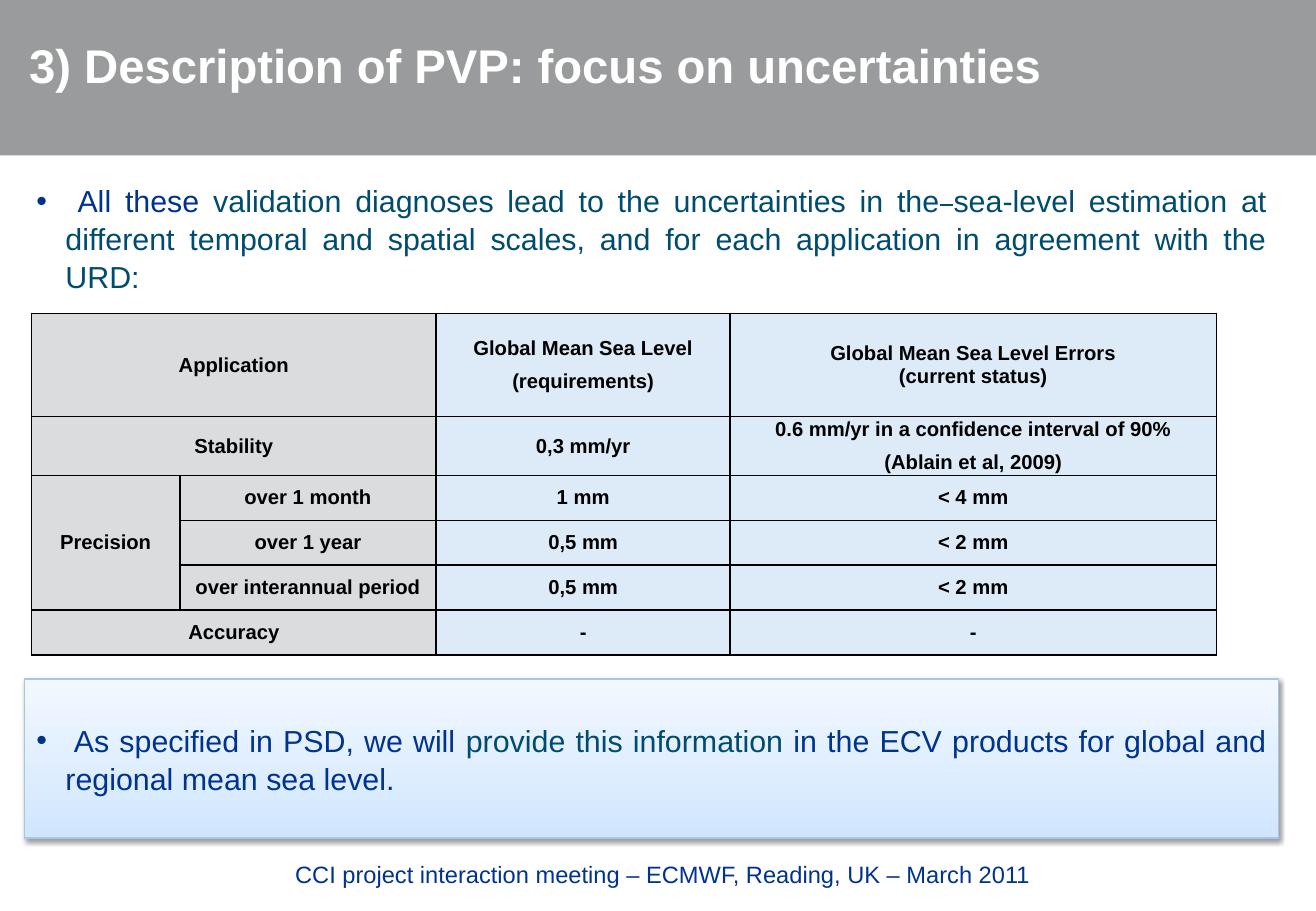
from lxml import etree
from pptx import Presentation
from pptx.dml.color import RGBColor
from pptx.enum.shapes import MSO_SHAPE as Shape
from pptx.enum.text import MSO_ANCHOR as Anchor, PP_ALIGN as Align
from pptx.oxml.ns import qn
from pptx.util import Emu, Pt

PX = 9144  # 100 px to the inch
COLORS = {
    "banner": "9A9B9C", "white": "FFFFFF", "black": "000000",
    "navy": "00338D", "teal": "004C6E",
    "label": "DBDCDD", "value": "DDEAF7",
    "note_low": "D0E6FF", "note_high": "F2F8FF", "note_line": "A5C6E6",
}
COLUMN_WIDTHS = [122, 211, 242, 400]
ROW_HEIGHTS = [85, 48, 37, 37, 37, 37]
LABEL_COLUMNS = 2
REQUIREMENTS = [
    ["Application", "", "Global Mean Sea Level\n(requirements)",
     "Global Mean Sea Level Errors\n(current status)"],
    ["Stability", "", "0,3 mm/yr",
     "0.6 mm/yr in a confidence interval of 90%\n(Ablain et al, 2009)"],
    ["Precision", "over 1 month", "1 mm", "< 4 mm"],
    ["", "over 1 year", "0,5 mm", "< 2 mm"],
    ["", "over interannual period", "0,5 mm", "< 2 mm"],
    ["Accuracy", "", "-", "-"],
]
MERGES = [((0, 0), (0, 1)), ((1, 0), (1, 1)), ((2, 0), (4, 0)), ((5, 0), (5, 1))]
STATUS_HEADER = (0, 3)


def px(*lengths):
    return [Emu(length * PX) for length in lengths]


def rgb(name):
    return RGBColor.from_string(COLORS[name])


def add_text(paragraph, text, size=18, color="navy", bold=False, strike=False):
    run = paragraph.add_run()
    run.text = text
    font = run.font
    font.name, font.size, font.bold = "Arial", Pt(size), bold
    font.color.rgb = rgb(color)
    if strike:
        run._r.get_or_add_rPr().set("strike", "sngStrike")


def add_bullet_text(frame, parts):
    """Fill a frame with one justified bullet made of (text, format) parts."""
    frame.word_wrap = True
    paragraph = frame.paragraphs[0]
    paragraph.alignment = Align.JUSTIFY
    paragraph.line_spacing = 1.04
    properties = paragraph._p.get_or_add_pPr()
    properties.set("marL", str(24 * PX))
    properties.set("indent", str(-24 * PX))
    etree.SubElement(properties, qn("a:buFont"), typeface="Arial")
    etree.SubElement(properties, qn("a:buChar"), char="•")
    for text, style in parts:
        add_text(paragraph, text, **style)


def add_box(slide, left, top, width, height):
    box = slide.shapes.add_shape(Shape.RECTANGLE, *px(left, top, width, height))
    box.shadow.inherit = False
    return box


def add_banner(slide):
    banner = add_box(slide, 0, 0, 1083, 128)
    banner.fill.solid()
    banner.fill.fore_color.rgb = rgb("banner")
    banner.line.fill.background()
    slide.shapes._spTree.insert(2, banner._element)  # behind the title


def set_title(slide, text):
    title = slide.shapes.title
    title.left, title.top, title.width, title.height = px(14, 32, 1036, 77)
    frame = title.text_frame
    frame.vertical_anchor = Anchor.TOP
    paragraph = frame.paragraphs[0]
    paragraph.alignment = Align.LEFT
    paragraph.line_spacing = 0.85
    paragraph.space_before = Pt(0)
    add_text(paragraph, text, size=28, color="white", bold=True)


def set_borders(cell):
    properties = cell._tc.get_or_add_tcPr()
    for index, side in enumerate(("lnL", "lnR", "lnT", "lnB")):
        line = etree.Element(qn(f"a:{side}"), w=str(Pt(1)))
        fill = etree.SubElement(line, qn("a:solidFill"))
        etree.SubElement(fill, qn("a:srgbClr"), val=COLORS["black"])
        properties.insert(index, line)


def fill_cell(cell, text, fill, space_after):
    cell.fill.solid()
    cell.fill.fore_color.rgb = rgb(fill)
    cell.vertical_anchor = Anchor.MIDDLE
    cell.margin_left, cell.margin_right = px(7, 7)
    cell.margin_top = cell.margin_bottom = 0
    set_borders(cell)
    if not text:
        return
    for index, line in enumerate(text.split("\n")):
        frame = cell.text_frame
        paragraph = frame.add_paragraph() if index else frame.paragraphs[0]
        paragraph.alignment = Align.CENTER
        paragraph.space_after = Pt(space_after)
        add_text(paragraph, line, size=12, color="black", bold=True)


def add_requirements_table(slide):
    area = px(26, 258, sum(COLUMN_WIDTHS), sum(ROW_HEIGHTS))
    table = slide.shapes.add_table(len(ROW_HEIGHTS), len(COLUMN_WIDTHS), *area).table
    table.first_row = table.horz_banding = False
    for column, width in zip(table.columns, px(*COLUMN_WIDTHS)):
        column.width = width
    for row, height in zip(table.rows, px(*ROW_HEIGHTS)):
        row.height = height
    for r, texts in enumerate(REQUIREMENTS):
        for c, text in enumerate(texts):
            fill = "label" if c < LABEL_COLUMNS else "value"
            space_after = 0 if (r, c) == STATUS_HEADER else 6
            fill_cell(table.cell(r, c), text, fill, space_after)
    for first, last in MERGES:
        table.cell(*first).merge(table.cell(*last))


def add_soft_shadow(box):
    effects = box._element.spPr.find(qn("a:effectLst"))
    shadow = etree.SubElement(effects, qn("a:outerShdw"), blurRad=str(Pt(3.1)),
                              dist=str(Pt(1.6)), dir="5400000", rotWithShape="0")
    color = etree.SubElement(shadow, qn("a:srgbClr"), val=COLORS["black"])
    etree.SubElement(color, qn("a:alpha"), val="38000")


def add_note(slide, parts):
    note = add_box(slide, 20, 559, 1032, 131)
    note.fill.gradient()
    note.fill.gradient_angle = 90
    for stop, color in zip(note.fill.gradient_stops, ("note_low", "note_high")):
        stop.color.rgb = rgb(color)
    note.line.color.rgb = rgb("note_line")
    note.line.width = Pt(0.75)
    add_soft_shadow(note)
    note.text_frame.vertical_anchor = Anchor.MIDDLE
    add_bullet_text(note.text_frame, parts)


def main():
    prs = Presentation()
    prs.slide_width, prs.slide_height = px(1083, 750)
    slide = prs.slides.add_slide(prs.slide_layouts[5])

    # Header
    add_banner(slide)
    set_title(slide, "3) Description of PVP: focus on uncertainties")

    # Introduction
    teal = {"color": "teal"}
    introduction = slide.shapes.add_textbox(*px(20, 144, 1032, 100))
    add_bullet_text(introduction.text_frame, [
        (" All these ", {}),
        ("validation diagnoses lead to the uncertainties in the", teal),
        (" ", {"color": "teal", "strike": True}),
        ("sea-level estimation at different temporal and spatial scales, "
         "and for each application in agreement with the URD:", teal),
    ])

    # Requirements and current status
    add_requirements_table(slide)

    # Note on the products
    add_note(slide, [
        (" As specified in PSD, we will ", {}),
        ("provide this information ", teal),
        ("in the ECV products for global and regional mean sea level.", {}),
    ])

    # Footer
    footer = slide.shapes.add_textbox(*px(233, 703, 671, 40)).text_frame
    footer.word_wrap = True
    add_text(footer.paragraphs[0],
             "CCI project interaction meeting – ECMWF, Reading, UK – March 2011", size=14)

    prs.save("out.pptx")


if __name__ == "__main__":
    main()
